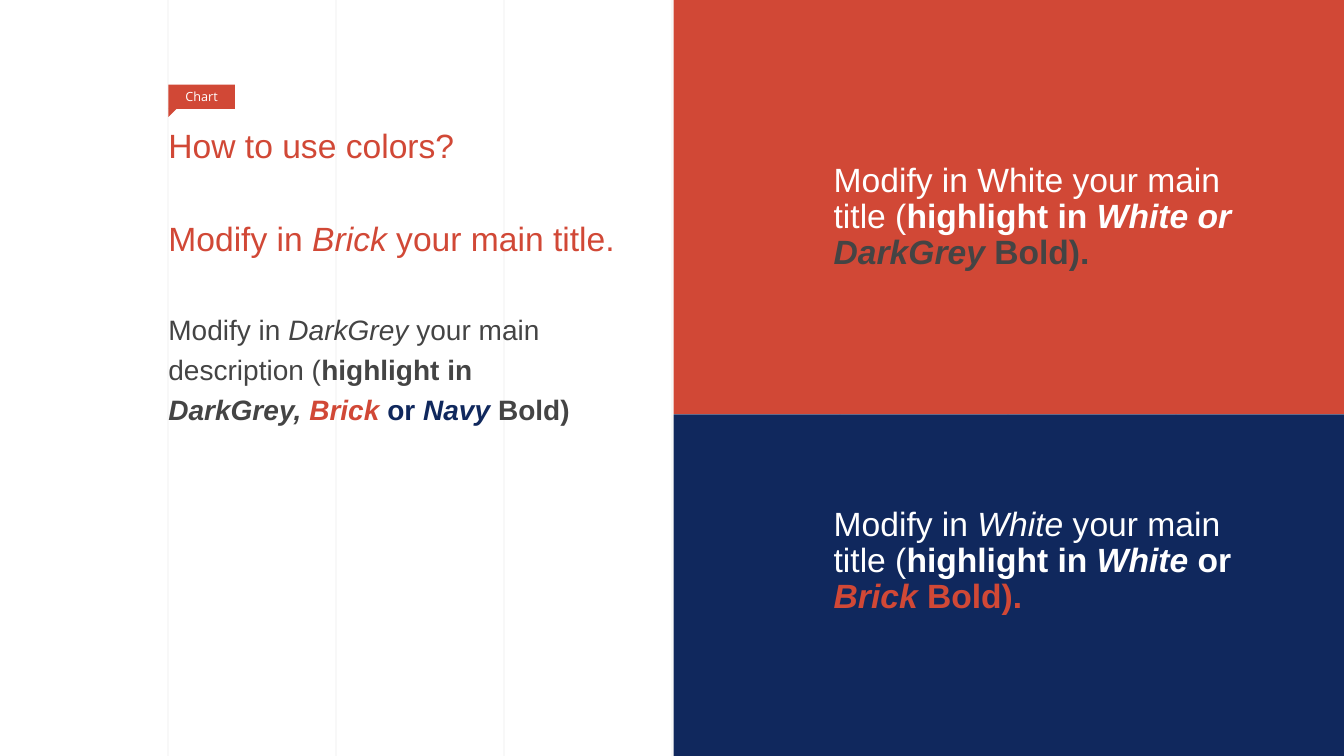
from dataclasses import dataclass

from lxml import etree
from pptx import Presentation
from pptx.dml.color import RGBColor
from pptx.enum.shapes import MSO_CONNECTOR, MSO_SHAPE
from pptx.enum.text import MSO_ANCHOR, PP_ALIGN
from pptx.oxml.ns import qn
from pptx.shapes.autoshape import Shape
from pptx.slide import Slide
from pptx.text.text import TextFrame
from pptx.util import Inches, Pt

BRICK = RGBColor(0xD1, 0x48, 0x36)
NAVY = RGBColor(0x10, 0x28, 0x5D)
DARK_GREY = RGBColor(0x44, 0x44, 0x44)
WHITE = RGBColor(0xFF, 0xFF, 0xFF)
STRAIGHT = MSO_CONNECTOR.STRAIGHT
RECTANGLE = MSO_SHAPE.RECTANGLE
RIGHT_TRIANGLE = MSO_SHAPE.RIGHT_TRIANGLE
TOP, MIDDLE = MSO_ANCHOR.TOP, MSO_ANCHOR.MIDDLE
LEFT, CENTER = PP_ALIGN.LEFT, PP_ALIGN.CENTER

SLIDE_WIDTH, SLIDE_HEIGHT = 13.33, 7.5
GRID_COLUMNS = 8
MARGIN = 1.67
PANEL_LEFT, PANEL_SPLIT = 6.68, 4.11


@dataclass
class Box:
    left: float
    top: float
    width: float
    height: float

    def lengths(self) -> tuple[int, int, int, int]:
        return (Inches(self.left), Inches(self.top),
                Inches(self.width), Inches(self.height))


@dataclass
class Span:
    text: str
    color: RGBColor
    bold: bool = False
    italic: bool = False


@dataclass
class Message:
    box: Box
    spans: list[Span]
    size: float = 24
    line_spacing: float = 1.0
    anchor: MSO_ANCHOR = TOP
    inset: bool = False


PANELS = [
    (Box(PANEL_LEFT, 0, SLIDE_WIDTH - PANEL_LEFT, PANEL_SPLIT), BRICK),
    (Box(PANEL_LEFT, PANEL_SPLIT, SLIDE_WIDTH - PANEL_LEFT,
         SLIDE_HEIGHT - PANEL_SPLIT), NAVY),
]

MESSAGES = [
    Message(Box(MARGIN, 2.16, 4.51, 0.8), [
        Span("Modify in ", BRICK),
        Span("Brick ", BRICK, italic=True),
        Span("your main title.", BRICK),
    ]),
    Message(Box(MARGIN, 3.03, 4.38, 1.18), [
        Span("Modify in ", DARK_GREY),
        Span("DarkGrey", DARK_GREY, italic=True),
        Span(" your main description (", DARK_GREY),
        Span("highlight in ", DARK_GREY, bold=True),
        Span("DarkGrey, ", DARK_GREY, bold=True, italic=True),
        Span("Brick ", BRICK, bold=True, italic=True),
        Span("or ", NAVY, bold=True),
        Span("Navy ", NAVY, bold=True, italic=True),
        Span("Bold)", DARK_GREY, bold=True),
    ], size=20, line_spacing=1.2),
    Message(Box(8.17, 1.76, 4.51, 0.8), [
        Span("Modify in White your main title (", WHITE),
        Span("highlight in ", WHITE, bold=True),
        Span("White or ", WHITE, bold=True, italic=True),
        Span("DarkGrey", DARK_GREY, bold=True, italic=True),
        Span(" Bold).", DARK_GREY, bold=True),
    ], line_spacing=0.9, anchor=MIDDLE, inset=True),
    Message(Box(8.17, 5.17, 4.51, 0.8), [
        Span("Modify in ", WHITE),
        Span("White ", WHITE, italic=True),
        Span("your main title (", WHITE),
        Span("highlight in ", WHITE, bold=True),
        Span("White", WHITE, bold=True, italic=True),
        Span(" or ", WHITE, bold=True),
        Span("Brick ", BRICK, bold=True, italic=True),
        Span("Bold).", BRICK, bold=True),
    ], line_spacing=0.9, anchor=MIDDLE, inset=True),
]


def remove_insets(frame: TextFrame) -> None:
    frame.margin_left = frame.margin_right = 0
    frame.margin_top = frame.margin_bottom = 0


def add_grid_line(slide: Slide, left: float) -> None:
    line = slide.shapes.add_connector(
        STRAIGHT, Inches(left), 0, Inches(left), Inches(SLIDE_HEIGHT))
    line.line.color.rgb = DARK_GREY
    line.line.width = Pt(0.5)
    properties = line._element.spPr
    color = properties.find(".//" + qn("a:srgbClr"))
    etree.SubElement(color, qn("a:alpha"), val="10000")
    etree.SubElement(properties, qn("a:effectLst"))


def add_block(slide: Slide, kind: MSO_SHAPE, box: Box, color: RGBColor) -> Shape:
    shape = slide.shapes.add_shape(kind, *box.lengths())
    shape.shadow.inherit = False
    shape.fill.solid()
    shape.fill.fore_color.rgb = color
    shape.line.fill.background()
    return shape


def add_message(slide: Slide, message: Message) -> None:
    frame = slide.shapes.add_textbox(*message.box.lengths()).text_frame
    frame.word_wrap = True
    frame.vertical_anchor = message.anchor
    if not message.inset:
        remove_insets(frame)
    paragraph = frame.paragraphs[0]
    paragraph.line_spacing = message.line_spacing
    for span in message.spans:
        run = paragraph.add_run()
        run.text = span.text
        run.font.name = "Arial"
        run.font.size = Pt(message.size)
        run.font.color.rgb = span.color
        run.font.bold = span.bold
        run.font.italic = span.italic


def add_title(slide: Slide) -> None:
    title = slide.shapes.title
    title.left, title.top, title.width, title.height = Box(
        MARGIN, 1.24, 3.86, 0.56).lengths()
    frame = title.text_frame
    frame.text = "How to use colors?"
    frame.word_wrap = True
    frame.vertical_anchor = TOP
    remove_insets(frame)
    paragraph = frame.paragraphs[0]
    paragraph.alignment = LEFT
    font = paragraph.runs[0].font
    font.name, font.size = "Arial", Pt(24)
    font.color.rgb = BRICK


def add_tag(slide: Slide) -> None:
    label = add_block(slide, RECTANGLE, Box(MARGIN, 0.84, 0.66, 0.24), BRICK)
    frame = label.text_frame
    frame.text = "Chart"
    frame.vertical_anchor = MIDDLE
    paragraph = frame.paragraphs[0]
    paragraph.alignment = CENTER
    font = paragraph.runs[0].font
    font.name, font.size = "Open Sans", Pt(9)
    font.color.rgb = WHITE
    pointer = add_block(
        slide, RIGHT_TRIANGLE, Box(MARGIN, 1.08, 0.08, 0.08), BRICK)
    pointer.rotation = 90


def main() -> None:
    presentation = Presentation()
    presentation.slide_width = Inches(SLIDE_WIDTH)
    presentation.slide_height = Inches(SLIDE_HEIGHT)
    slide = presentation.slides.add_slide(presentation.slide_layouts[5])

    # Background grid
    for column in range(1, GRID_COLUMNS):
        add_grid_line(slide, column * SLIDE_WIDTH / GRID_COLUMNS)

    # Colour panels
    for box, color in PANELS:
        add_block(slide, RECTANGLE, box, color)

    # Texts and tag
    for message in MESSAGES:
        add_message(slide, message)
    add_title(slide)
    add_tag(slide)

    presentation.save("out.pptx")


if __name__ == "__main__":
    main()
